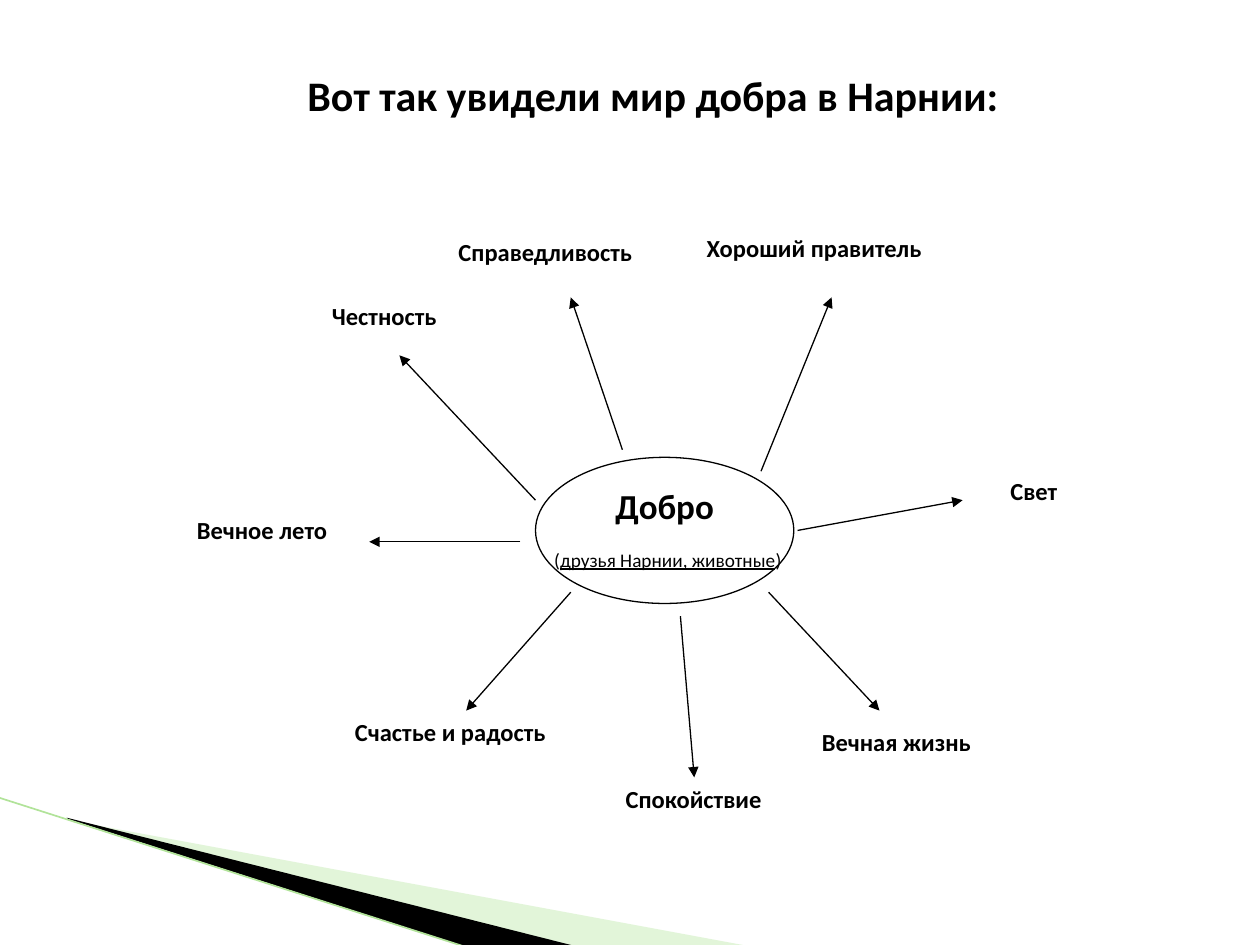
"""Build the slide about the world of good in Narnia: a central oval with eight labelled arrows."""
from lxml import etree
from pptx import Presentation
from pptx.dml.color import RGBColor
from pptx.enum import shapes, text
from pptx.oxml.ns import qn
from pptx.util import Inches, Pt

BLACK = RGBColor(0x00, 0x00, 0x00)
WHITE = RGBColor(0xFF, 0xFF, 0xFF)
PALE_GREEN = RGBColor(0xB8, 0xE7, 0xA1)
EDGE_GREEN = RGBColor(0xB1, 0xE3, 0x99)
LEFT, CENTER = text.PP_ALIGN.LEFT, text.PP_ALIGN.CENTER


def write(sp, words, size, align=LEFT, bold=True):
    tf = sp.text_frame
    tf.word_wrap = True
    tf.vertical_anchor = text.MSO_ANCHOR.TOP
    p = tf.paragraphs[0]
    p.text = words
    p.alignment = align
    f = p.runs[0].font
    f.name, f.size, f.bold = "Calibri", Pt(size), bold
    f.color.rgb = BLACK


def add_line(start, end, color, width, arrow=False):
    points = [Inches(v) for v in (*start, *end)]
    cxn = s.shapes.add_connector(shapes.MSO_CONNECTOR.STRAIGHT, *points)
    cxn.line.color.rgb = color
    cxn.line.width = Pt(width)
    if arrow:
        etree.SubElement(cxn.line._get_or_add_ln(), qn("a:tailEnd"), type="triangle")
    etree.SubElement(cxn._element.spPr, qn("a:effectLst"))


prs = Presentation()
prs.slide_width, prs.slide_height = Inches(10), Inches(7.5)
s = prs.slides.add_slide(prs.slide_layouts[5])

wedges = [
    (PALE_GREEN, 40, [(0.55, 6.51), (5.95, 7.51), (4.56, 7.51), (0.55, 6.5)]),
    (BLACK, 100, [(0.53, 6.49), (4.57, 7.51), (3.72, 7.52), (0.54, 6.5)]),
]
for color, opacity, points in wedges:
    corners = [(Inches(x), Inches(y)) for x, y in points]
    fb = s.shapes.build_freeform(*corners[0])
    fb.add_line_segments(corners[1:])
    sp = fb.convert_to_shape()
    sp.shadow.inherit = False
    sp.fill.solid()
    sp.fill.fore_color.rgb = color
    sp.line.fill.background()
    if opacity < 100:
        clr = sp._element.spPr.find(qn("a:solidFill"))[0]
        etree.SubElement(clr, qn("a:alpha"), val=str(opacity * 1000))
add_line((-0.01, 6.33), (3.71, 7.52), EDGE_GREEN, 0.95)

title = s.shapes.title
title.left, title.top, title.width, title.height = [Inches(v) for v in (2.34, 0.47, 6.95, 0.81)]
write(title, "Вот так увидели мир добра в Нарнии:", 24)
title.text_frame.margin_top = Inches(0.08)

oval = s.shapes.add_shape(shapes.MSO_SHAPE.OVAL, *[Inches(v) for v in (4.25, 3.63, 2.05, 1.16)])
oval.shadow.inherit = False
oval.fill.solid()
oval.fill.fore_color.rgb = WHITE
oval.line.color.rgb = BLACK
oval.line.width = Pt(0.75)
write(oval, "Добро", 20, CENTER)

qualities = [
    ("Честность", (1.84, 2.34, 2.42, 0.5), CENTER, (4.25, 3.97), (3.17, 2.82)),
    ("Хороший правитель", (5.51, 1.8, 2.69, 0.56), LEFT, (6.04, 3.74), (6.6, 2.36)),
    ("Справедливость", (3.54, 1.83, 1.85, 0.52), LEFT, (4.94, 3.57), (4.53, 2.36)),
    ("Вечное лето", (1.25, 4.04, 1.66, 0.54), CENTER, (4.13, 4.3), (2.93, 4.3)),
    ("Счастье и радость", (2.36, 5.64, 2.43, 0.53), CENTER, (4.53, 4.7), (3.7, 5.64)),
    ("Спокойствие", (4.6, 6.17, 1.81, 0.48), CENTER, (5.4, 4.89), (5.51, 6.17)),
    ("Вечная жизнь", (5.7, 5.72, 2.83, 0.46), CENTER, (6.1, 4.7), (6.98, 5.64)),
    ("Свет", (7.66, 3.73, 1.09, 0.5), CENTER, (6.33, 4.21), (7.64, 3.97)),
]
for words, box, align, start, end in qualities:
    sp = s.shapes.add_shape(shapes.MSO_SHAPE.RECTANGLE, *[Inches(v) for v in box])
    sp.shadow.inherit = False
    sp.fill.solid()
    sp.fill.fore_color.rgb = WHITE
    sp.line.fill.background()
    write(sp, words, 14, align)
for words, box, align, start, end in qualities:
    add_line(start, end, BLACK, 0.75, arrow=True)

friends = s.shapes.add_textbox(*[Inches(v) for v in (4.3, 4.3, 2.19, 0.29)])
write(friends, "(", 11, bold=False)
p = friends.text_frame.paragraphs[0]
p.space_after = Pt(10)
for words, underline in [("друзья Нарнии, животные", True), (")", False)]:
    r = p.add_run()
    r.text = words
    r.font.name, r.font.size, r.font.underline = "Calibri", Pt(11), underline
    r.font.color.rgb = BLACK

prs.save("out.pptx")
